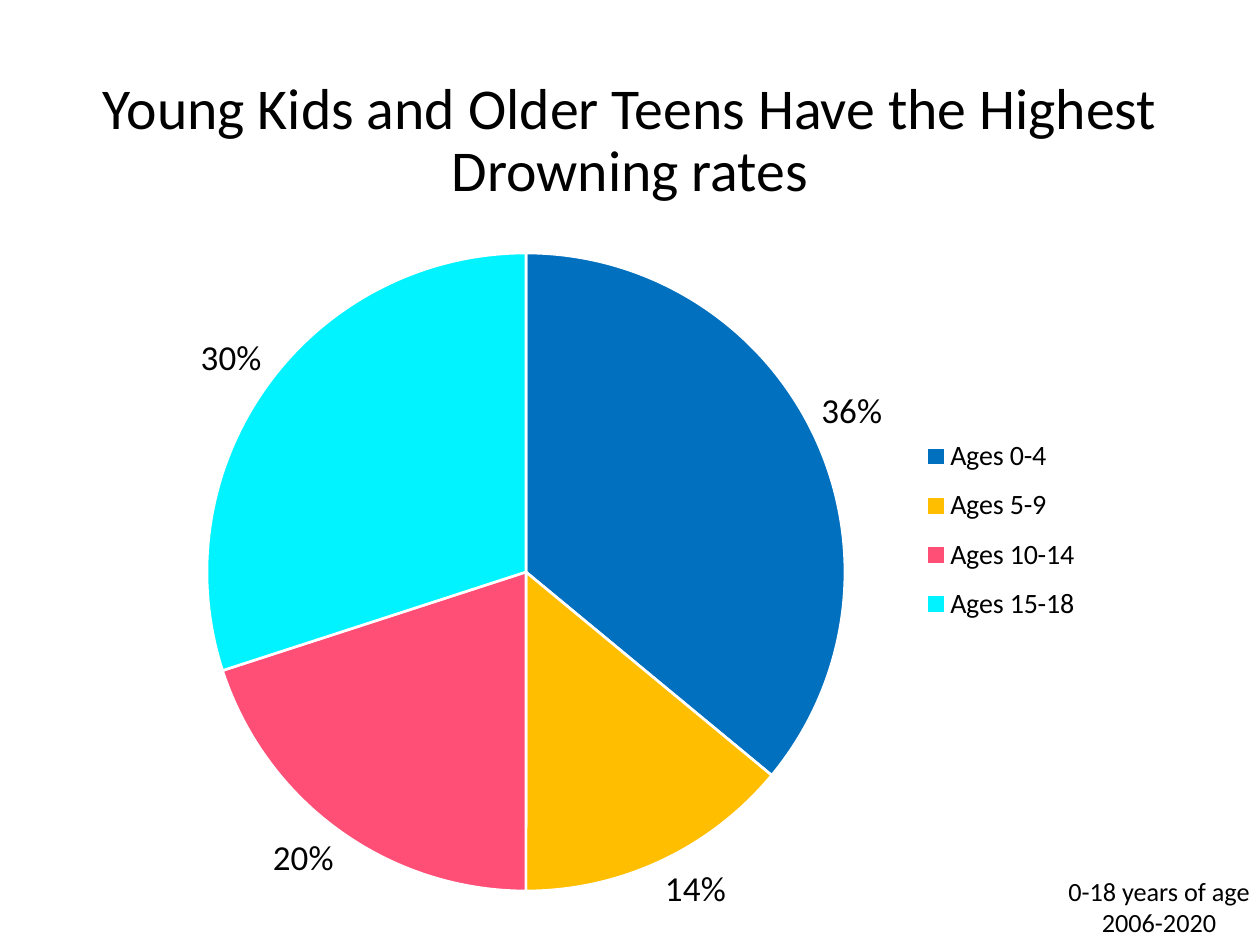
from dataclasses import dataclass

import pptx
import pptx.chart.data
import pptx.dml.color
import pptx.enum.chart
import pptx.enum.text
import pptx.oxml
import pptx.oxml.ns
import pptx.util

Pt = pptx.util.Pt
RGBColor = pptx.dml.color.RGBColor

BLACK = RGBColor(0x00, 0x00, 0x00)
WHITE = RGBColor(0xFF, 0xFF, 0xFF)
BLUE = RGBColor(0x00, 0x70, 0xBF)
GOLD = RGBColor(0xFF, 0xBE, 0x00)
PINK = RGBColor(0xFF, 0x4F, 0x77)
CYAN = RGBColor(0x00, 0xF3, 0xFE)
FONT = "Calibri"


@dataclass
class Box:
    left: float
    top: float
    width: float
    height: float

    def place(self) -> tuple:
        return tuple(Pt(n) for n in (self.left, self.top, self.width, self.height))


@dataclass
class Note:
    text: str
    box: Box
    size: float
    wrap: bool
    pitch: float


@dataclass
class Slice:
    name: str
    share: int
    color: RGBColor


NOTES = [
    Note("Young Kids and Older Teens Have the Highest Drowning rates",
         Box(49.7, 28.8, 620.6, 104.4), 33, True, 0.9),
    Note("0-18 years of age\n2006-2020",
         Box(602.6, 496.1, 119.5, 43.9), 15, False, 1.0),
]
SLICES = [
    Slice("Ages 0-4", 36, BLUE),
    Slice("Ages 5-9", 14, GOLD),
    Slice("Ages 10-14", 20, PINK),
    Slice("Ages 15-18", 30, CYAN),
]
CHART = Box(0, 134.6, 709.9, 405.4)
PIE = Box(118.3, 10, 364.6, 364.6)
KEY = Box(524, 108, 96, 121)


def style(font, size: float) -> None:
    font.name = FONT
    font.size = Pt(size)
    font.color.rgb = BLACK


def draw_note(slide, note: Note) -> None:
    shape = slide.shapes.add_textbox(*note.box.place())
    frame = shape.text_frame
    frame.text = note.text
    frame.word_wrap = note.wrap
    frame.vertical_anchor = pptx.enum.text.MSO_ANCHOR.MIDDLE
    for line in frame.paragraphs:
        line.alignment = pptx.enum.text.PP_ALIGN.CENTER
        line.line_spacing = note.pitch
        for run in line.runs:
            style(run.font, note.size)


def layout(box: Box, inner: bool = False):
    """Return a manual chart layout, as fractions of the chart frame."""
    target = '<c:layoutTarget val="inner"/>' if inner else ""
    return pptx.oxml.parse_xml(
        f'<c:layout {pptx.oxml.ns.nsdecls("c")}><c:manualLayout>{target}'
        '<c:xMode val="edge"/><c:yMode val="edge"/>'
        f'<c:x val="{box.left / CHART.width:.4f}"/>'
        f'<c:y val="{box.top / CHART.height:.4f}"/>'
        f'<c:w val="{box.width / CHART.width:.4f}"/>'
        f'<c:h val="{box.height / CHART.height:.4f}"/>'
        '</c:manualLayout></c:layout>')


def draw_pie(slide) -> None:
    data = pptx.chart.data.CategoryChartData()
    data.categories = [part.name for part in SLICES]
    data.add_series("Series 1", [part.share for part in SLICES])
    chart = slide.shapes.add_chart(
        pptx.enum.chart.XL_CHART_TYPE.PIE, *CHART.place(), data).chart
    chart.has_title = False
    style(chart.font, 10)

    chart.has_legend = True
    legend = chart.legend
    legend.position = pptx.enum.chart.XL_LEGEND_POSITION.RIGHT
    legend.include_in_layout = False
    style(legend.font, 16)

    plot = chart.plots[0]
    plot.vary_by_categories = True
    series = plot.series[0]
    for spot, part in enumerate(SLICES):
        form = series.points[spot].format
        form.fill.solid()
        form.fill.fore_color.rgb = part.color
        form.line.color.rgb = WHITE
        form.line.width = Pt(1.5)

    labels = series.data_labels
    labels.show_value = False
    labels.show_percentage = True
    labels.number_format = "0%"
    labels.number_format_is_linked = False
    labels.position = pptx.enum.chart.XL_LABEL_POSITION.OUTSIDE_END
    style(labels.font, 20)

    name = pptx.oxml.ns.qn
    area = chart.element.find(".//" + name("c:plotArea"))
    key = chart.element.find(".//" + name("c:legend"))
    for node in (area, key):
        for old in node.findall(name("c:layout")):
            node.remove(old)
    area.insert(0, layout(PIE, inner=True))
    key.find(name("c:legendPos")).addnext(layout(KEY))


def main() -> None:
    deck = pptx.Presentation()
    deck.slide_width = Pt(720)
    deck.slide_height = Pt(540)
    slide = deck.slides.add_slide(deck.slide_layouts[6])
    title, span = NOTES
    draw_note(slide, title)
    draw_pie(slide)
    draw_note(slide, span)
    deck.save("out.pptx")


if __name__ == "__main__":
    main()
